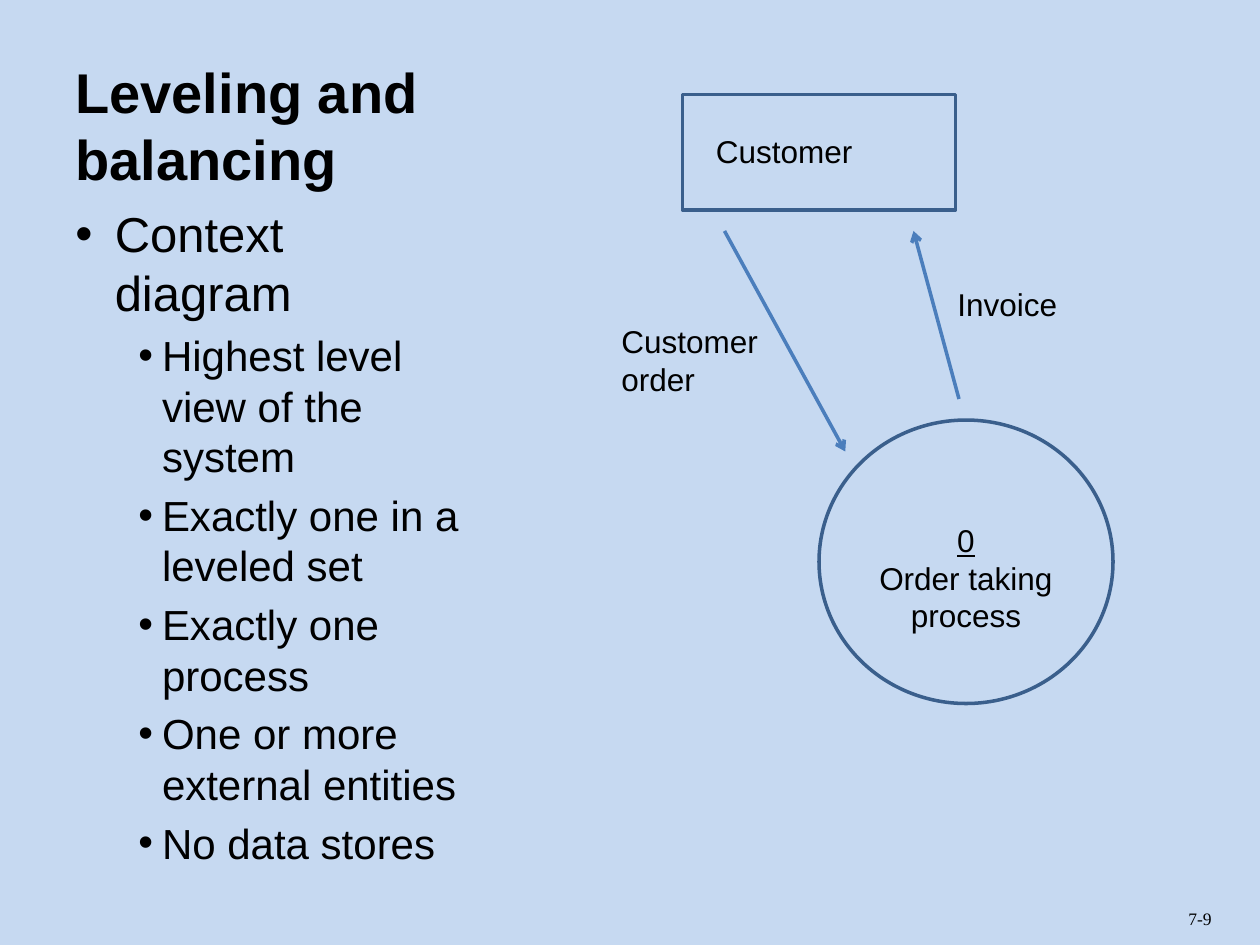
from lxml import etree
from pptx import Presentation
from pptx import util as u
from pptx.dml.color import RGBColor
from pptx.enum import shapes, text
from pptx.oxml.ns import qn

COLORS = {
    "background": "C6D9F1",
    "text": "000000",
    "outline": "3A5F8C",
    "arrow": "4B7EBC",
}


class DiagramSlide:
    """Holds the style and the current slide; all lengths are in points."""

    font_name = "Arial"
    label_size = 18
    line_width = 2

    def __init__(self, presentation):
        self.slide = presentation.slides.add_slide(presentation.slide_layouts[6])
        fill = self.slide.background.fill
        fill.solid()
        fill.fore_color.rgb = self.color("background")

    def color(self, name):
        return RGBColor.from_string(COLORS[name])

    def style_line(self, line, color_name):
        line.color.rgb = self.color(color_name)
        line.width = u.Pt(self.line_width)

    def style_font(self, paragraph, size, name=None):
        paragraph.font.size = u.Pt(size)
        paragraph.font.name = name or self.font_name
        paragraph.font.color.rgb = self.color("text")

    def text_box(self, box, lines, size=label_size, font_name=None,
                 align=text.PP_ALIGN.LEFT, anchor=text.MSO_ANCHOR.TOP):
        """Add a wrapping text box and return its paragraphs, one per line."""
        frame = self.slide.shapes.add_textbox(*map(u.Pt, box)).text_frame
        frame.word_wrap = True
        frame.vertical_anchor = anchor
        frame.text = "\n".join(lines)
        for paragraph in frame.paragraphs:
            paragraph.alignment = align
            self.style_font(paragraph, size, font_name)
        return frame.paragraphs

    def bullets(self, box, items):
        """Add a bulleted list from (level, wording) pairs."""
        level_styles = [(28, 22.5, 22.5), (24, 49.5, 13.5)]
        paragraphs = self.text_box(box, [wording for _, wording in items])
        for paragraph, (level, _) in zip(paragraphs, items):
            size, margin, hanging = level_styles[level]
            self.style_font(paragraph, size)
            paragraph.level = level
            paragraph.space_before = u.Pt(size * 0.2)
            properties = paragraph._p.get_or_add_pPr()
            properties.set("marL", str(u.Pt(margin)))
            properties.set("indent", str(-u.Pt(hanging)))
            etree.SubElement(properties, qn("a:buFont"), typeface=self.font_name)
            etree.SubElement(properties, qn("a:buChar"), char="•")

    def outline(self, kind, box):
        shape = self.slide.shapes.add_shape(kind, *map(u.Pt, box))
        shape.shadow.inherit = False
        shape.fill.background()
        self.style_line(shape.line, "outline")

    def arrow(self, start, end):
        connector = self.slide.shapes.add_connector(
            shapes.MSO_CONNECTOR.STRAIGHT, *map(u.Pt, start + end))
        self.style_line(connector.line, "arrow")
        etree.SubElement(connector.line._get_or_add_ln(), qn("a:tailEnd"), type="arrow")
        etree.SubElement(connector._element.spPr, qn("a:effectLst"))


def main():
    presentation = Presentation()
    presentation.slide_width = u.Pt(720)
    presentation.slide_height = u.Pt(540)
    page = DiagramSlide(presentation)

    page.text_box((672, 515.5, 48, 19.4), ["7-9"], 10, "Times New Roman")
    title = page.text_box((36, 21.6, 237, 91.4), ["Leveling and balancing"], 32,
                          anchor=text.MSO_ANCHOR.BOTTOM)
    title[0].font.bold = True
    page.bullets((36, 113, 237, 369.4), [
        (0, "Context diagram"),
        (1, "Highest level view of the system"),
        (1, "Exactly one in a leveled set"),
        (1, "Exactly one process"),
        (1, "One or more external entities"),
        (1, "No data stores"),
    ])

    page.outline(shapes.MSO_SHAPE.RECTANGLE, (390, 54, 156, 66))
    page.outline(shapes.MSO_SHAPE.OVAL, (468, 240, 168, 162))
    page.text_box((402, 72, 138, 29), ["Customer"])
    process = page.text_box((483, 294, 138, 72.7), ["0", "Order taking process"],
                            align=text.PP_ALIGN.CENTER)
    process[0].font.underline = True

    page.arrow((414, 132), (483, 258))
    page.text_box((348, 180.7, 138, 51), ["Customer", "order"])
    page.arrow((548, 228), (522, 132))
    page.text_box((540, 159.3, 138, 29), ["Invoice"])

    presentation.save("out.pptx")


if __name__ == "__main__":
    main()
